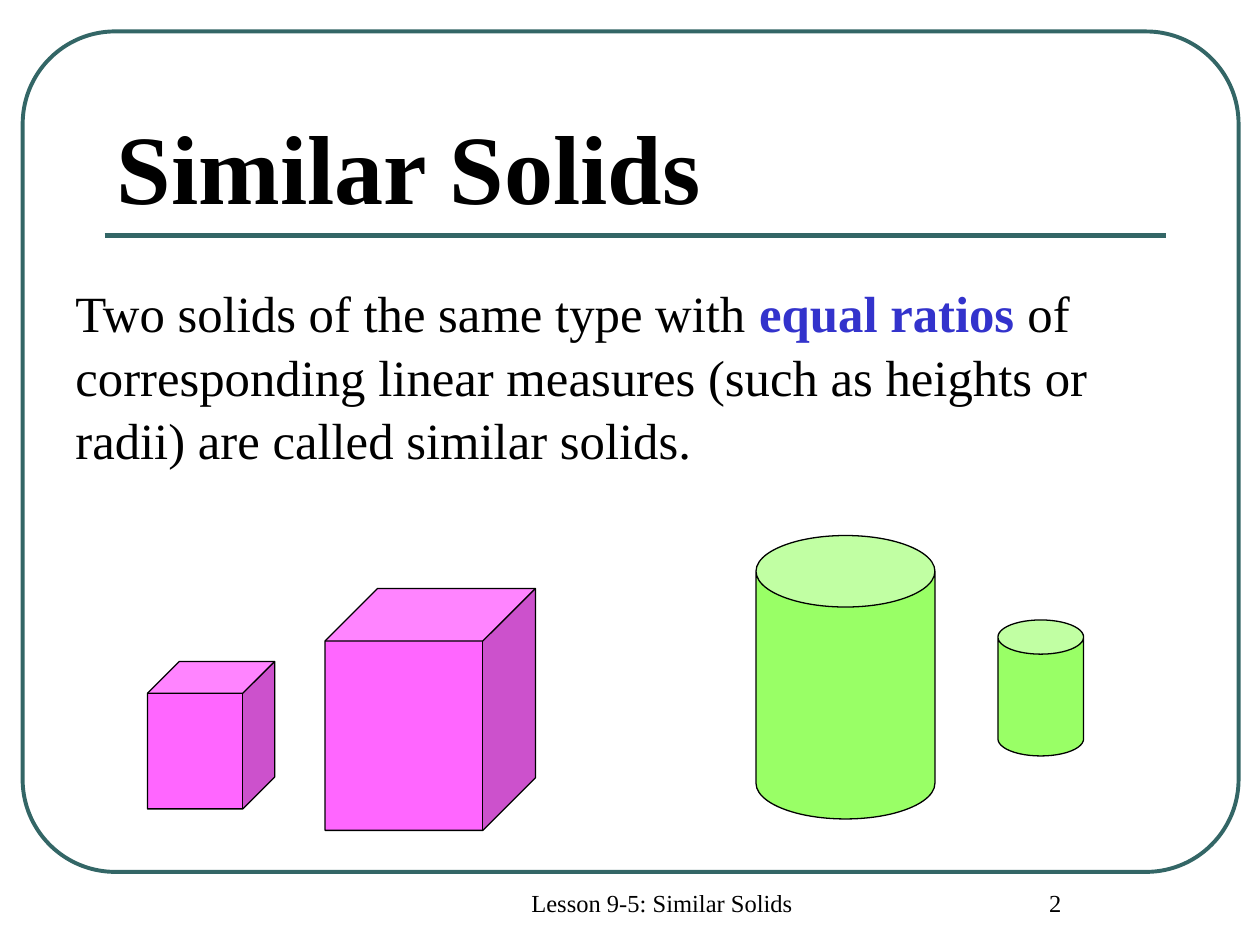
from dataclasses import dataclass

from lxml.etree import SubElement
from pptx import Presentation
from pptx.dml.color import RGBColor
from pptx.enum.shapes import MSO_CONNECTOR, MSO_SHAPE
from pptx.enum.text import MSO_ANCHOR as Anchor, PP_ALIGN as Align
from pptx.oxml.ns import qn
from pptx.slide import Slide
from pptx.util import Inches, Pt

COLORS = {
    "teal": "336666",
    "black": "000000",
    "blue": "3333CC",
    "green": "99FF66",
    "pink": "FF66FF",
}
FONT = "Times New Roman"


@dataclass(frozen=True)
class Solid:
    preset: MSO_SHAPE
    box: tuple[float, float, float, float]
    adjustment: float
    fill: str | None
    line: str = "black"
    weight: float = 0.75


@dataclass(frozen=True)
class Phrase:
    text: str
    color: str = "black"
    bold: bool = False


@dataclass(frozen=True)
class Passage:
    box: tuple[float, float, float, float]
    phrases: tuple[Phrase, ...]
    size: float
    paragraph_format: dict
    anchor: Anchor = Anchor.TOP


FRAME = Solid(MSO_SHAPE.ROUNDED_RECTANGLE, (0.18, 0.25, 9.65, 6.67), 0.11, None, "teal", 2.25)
SOLIDS = (
    Solid(MSO_SHAPE.CAN, (6, 4.25, 1.42, 2.25), 0.4, "green"),
    Solid(MSO_SHAPE.CAN, (7.92, 4.92, 0.68, 1.08), 0.4, "green"),
    Solid(MSO_SHAPE.CUBE, (2.58, 4.67, 1.67, 1.92), 0.25, "pink"),
    Solid(MSO_SHAPE.CUBE, (1.17, 5.25, 1.01, 1.17), 0.25, "pink"),
)
CENTERED = {"alignment": Align.CENTER}
PASSAGES = (
    Passage((3.67, 7, 3.17, 0.5), (Phrase("Lesson 9-5: Similar Solids"),), 14, CENTERED),
    Passage((7.5, 7, 1.75, 0.5), (Phrase("2"),), 14, CENTERED),
    Passage(
        (0.83, 0.58, 8.42, 1.25),
        (Phrase("Similar Solids", bold=True),),
        56,
        {"alignment": Align.LEFT},
        Anchor.BOTTOM,
    ),
    Passage(
        (0.5, 2.17, 9.08, 1.83),
        (
            Phrase("Two solids of the same type with "),
            Phrase("equal ratios", "blue", True),
            Phrase(
                " of corresponding linear measures (such as heights or radii)"
                " are called similar solids."
            ),
        ),
        29,
        {"alignment": Align.LEFT, "space_before": Pt(3), "line_spacing": 1.04},
    ),
)


def rgb(name: str) -> RGBColor:
    """Return the named colour."""
    return RGBColor.from_string(COLORS[name])


def draw_solid(slide: Slide, solid: Solid) -> None:
    """Draw one outlined preset shape."""
    shape = slide.shapes.add_shape(solid.preset, *map(Inches, solid.box))
    shape.shadow.inherit = False
    shape.adjustments[0] = solid.adjustment
    if solid.fill:
        shape.fill.solid()
        shape.fill.fore_color.rgb = rgb(solid.fill)
    else:
        shape.fill.background()
    shape.line.color.rgb = rgb(solid.line)
    shape.line.width = Pt(solid.weight)


def draw_title_rule(slide: Slide) -> None:
    """Draw the line under the title."""
    ends = map(Inches, (0.83, 1.87, 9.25, 1.87))
    rule = slide.shapes.add_connector(MSO_CONNECTOR.STRAIGHT, *ends)
    rule.line.color.rgb = rgb("teal")
    rule.line.width = Pt(3)
    SubElement(rule._element.spPr, qn("a:effectLst"))


def draw_passage(slide: Slide, passage: Passage) -> None:
    """Write one paragraph of styled phrases."""
    frame = slide.shapes.add_textbox(*map(Inches, passage.box)).text_frame
    frame.word_wrap = True
    frame.vertical_anchor = passage.anchor
    paragraph = frame.paragraphs[0]
    for attribute, value in passage.paragraph_format.items():
        setattr(paragraph, attribute, value)
    for phrase in passage.phrases:
        run = paragraph.add_run()
        run.text = phrase.text
        font_format = {"name": FONT, "size": Pt(passage.size), "bold": phrase.bold}
        for attribute, value in font_format.items():
            setattr(run.font, attribute, value)
        run.font.color.rgb = rgb(phrase.color)


def main() -> None:
    """Build and save the similar solids slide."""
    deck = Presentation()
    deck.slide_width, deck.slide_height = Inches(10), Inches(7.5)
    slide = deck.slides.add_slide(deck.slide_layouts[6])
    draw_solid(slide, FRAME)
    draw_title_rule(slide)
    for passage in PASSAGES:
        draw_passage(slide, passage)
    for solid in SOLIDS:
        draw_solid(slide, solid)
    deck.save("out.pptx")


if __name__ == "__main__":
    main()
